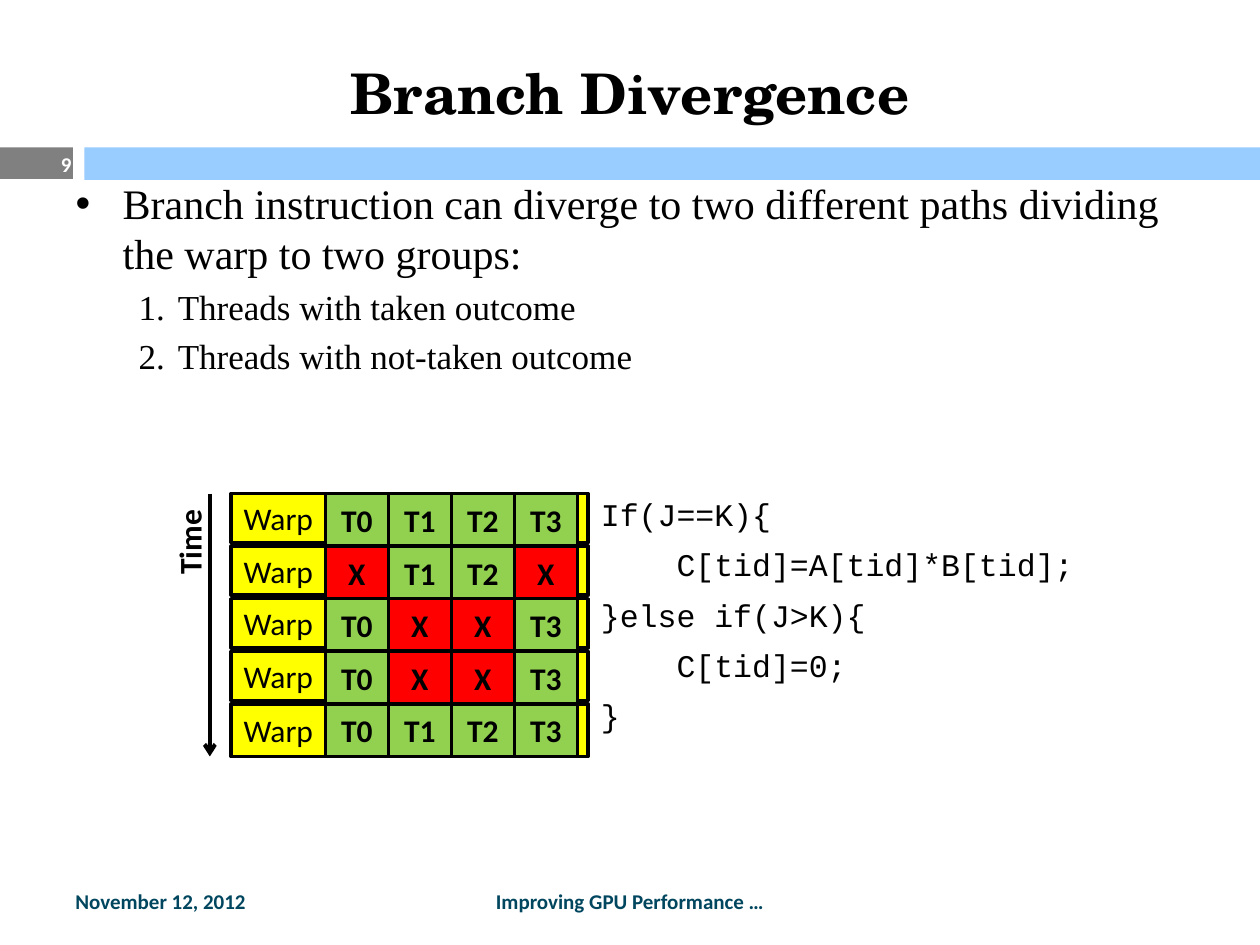
from dataclasses import dataclass

from lxml import etree
from pptx import Presentation
from pptx.dml.color import RGBColor
from pptx.enum.shapes import MSO_CONNECTOR, MSO_SHAPE
from pptx.enum.text import MSO_ANCHOR, MSO_AUTO_SIZE, PP_ALIGN
from pptx.oxml.ns import qn
from pptx.util import Cm, Pt

LEFT, CENTER, RIGHT = PP_ALIGN.LEFT, PP_ALIGN.CENTER, PP_ALIGN.RIGHT
TOP, MIDDLE = MSO_ANCHOR.TOP, MSO_ANCHOR.MIDDLE
RECTANGLE, STRAIGHT = MSO_SHAPE.RECTANGLE, MSO_CONNECTOR.STRAIGHT
NO_AUTOFIT = MSO_AUTO_SIZE.NONE


@dataclass(frozen=True)
class Theme:
    black: str = "000000"
    white: str = "FFFFFF"
    gray: str = "808080"
    band: str = "99CCFF"
    warp: str = "FFFF00"
    active: str = "92D050"
    masked: str = "FF0000"
    footer: str = "01465F"
    title_font: str = "TeX Gyre Schola"
    body_font: str = "Times New Roman"
    label_font: str = "Calibri"
    code_font: str = "Courier New"
    title_size: int = 32
    body_size: int = 24
    item_size: int = 20
    label_size: int = 18
    footer_size: int = 12


THEME = Theme()

TITLE = "Branch Divergence"
STATEMENT = ("Branch instruction can diverge to two different paths dividing "
             "the warp to two groups:")
OUTCOMES = ["Threads with taken outcome", "Threads with not-taken outcome"]
CODE = ["If(J==K){", "    C[tid]=A[tid]*B[tid];", "}else if(J>K){",
        "    C[tid]=0;", "}"]
THREADS = ["T0 T1 T2 T3", "X T1 T2 X", "T0 X X T3", "T0 X X T3", "T0 T1 T2 T3"]

GRID_TOP = 9.95
WARP_LEFT, WARP_WIDTH, WARP_HEIGHT = 4.66, 7.2, 0.99
THREAD_LEFT, THREAD_WIDTH, ROW_HEIGHT = 6.56, 1.27, 1.06
TIME_X = 4.23


def rgb(color):
    return RGBColor.from_string(color)


def text_format(font, size, color=THEME.black, bold=False):
    return {"name": font, "size": Pt(size), "bold": bold, "color": color}


LABEL = text_format(THEME.label_font, THEME.label_size)
BOLD_LABEL = {**LABEL, "bold": True}
FOOTER = text_format(THEME.label_font, THEME.footer_size, THEME.footer, True)


def write(paragraph, text, style, alignment=LEFT):
    paragraph.alignment = alignment
    run = paragraph.add_run()
    run.text = text
    for name, value in style.items():
        if name == "color":
            run.font.color.rgb = rgb(value)
        else:
            setattr(run.font, name, value)


def place(shape, left, top, width, height):
    box = {"left": left, "top": top, "width": width, "height": height}
    for name, value in box.items():
        setattr(shape, name, Cm(value))


def add_rectangle(slide, box, fill, text="", style=LABEL, alignment=LEFT, outlined=True):
    shape = slide.shapes.add_shape(RECTANGLE, *map(Cm, box))
    shape.shadow.inherit = False
    shape.fill.solid()
    shape.fill.fore_color.rgb = rgb(fill)
    if outlined:
        shape.line.color.rgb = rgb(THEME.black)
        shape.line.width = Pt(2)
    else:
        shape.line.fill.background()
    if text:
        shape.text_frame.vertical_anchor = MIDDLE
        write(shape.text_frame.paragraphs[0], text, style, alignment)


def add_label(slide, box, text, style, alignment=LEFT, anchor=MIDDLE, wrap=True):
    shape = slide.shapes.add_textbox(*map(Cm, box))
    shape.text_frame.word_wrap = wrap
    shape.text_frame.vertical_anchor = anchor
    write(shape.text_frame.paragraphs[0], text, style, alignment)
    return shape


def add_arrow(slide, start, end):
    arrow = slide.shapes.add_connector(STRAIGHT, *map(Cm, start + end))
    arrow.line.color.rgb = rgb(THEME.black)
    arrow.line.width = Pt(2.25)
    etree.SubElement(arrow.line._get_or_add_ln(), qn("a:tailEnd"), type="arrow")
    etree.SubElement(arrow._element.spPr, qn("a:effectLst"))


def set_bullet(paragraph, margin, hanging, tag, **attributes):
    properties = paragraph._p.get_or_add_pPr()
    properties.set("marL", str(Cm(margin)))
    properties.set("indent", str(-Cm(hanging)))
    etree.SubElement(properties, qn(tag), **attributes)


def fill_title(slide):
    title = slide.shapes.title
    place(title, 1.27, 0.76, 22.86, 2.21)
    title.text_frame.auto_size = NO_AUTOFIT
    title.text_frame.vertical_anchor = MIDDLE
    style = text_format(THEME.title_font, THEME.title_size, bold=True)
    write(title.text_frame.paragraphs[0], TITLE, style, CENTER)


def fill_body(slide):
    body = slide.placeholders[1]
    place(body, 1.27, 3.45, 22.86, 13.64)
    frame = body.text_frame
    frame.auto_size = NO_AUTOFIT
    frame.vertical_anchor = TOP
    statement = frame.paragraphs[0]
    statement.space_before = Pt(0)
    set_bullet(statement, 0.95, 0.95, "a:buChar", char="•")
    write(statement, STATEMENT, text_format(THEME.body_font, THEME.body_size))
    for outcome in OUTCOMES:
        item = frame.add_paragraph()
        item.level = 1
        item.space_before = Pt(4)
        set_bullet(item, 2.06, 0.79, "a:buAutoNum", type="arabicPeriod")
        write(item, outcome, text_format(THEME.body_font, THEME.item_size))


def add_code_table(slide):
    box = (11.86, GRID_TOP, 10.36, 0.64 * len(CODE))
    table = slide.shapes.add_table(len(CODE), 1, *map(Cm, box)).table
    table.first_row = table.horz_banding = False
    style = text_format(THEME.code_font, THEME.label_size)
    for row, line in enumerate(CODE):
        cell = table.cell(row, 0)
        cell.fill.background()
        write(cell.text_frame.paragraphs[0], line, style)


def add_warp_grid(slide):
    last = len(THREADS) - 1
    for row, threads in enumerate(THREADS):
        top = GRID_TOP + row * ROW_HEIGHT
        height = ROW_HEIGHT if row == last else WARP_HEIGHT
        add_rectangle(slide, (WARP_LEFT, top, WARP_WIDTH, height), THEME.warp, "Warp")
        for column, thread in enumerate(threads.split()):
            left = THREAD_LEFT + column * THREAD_WIDTH
            fill = THEME.masked if thread == "X" else THEME.active
            add_rectangle(slide, (left, top, THREAD_WIDTH, ROW_HEIGHT), fill,
                          thread, BOLD_LABEL, CENTER)


def add_time_axis(slide):
    label = add_label(slide, (2.9, 10.41, 1.83, 1.02), "Time", BOLD_LABEL,
                      anchor=TOP, wrap=False)
    label.rotation = 270
    bottom = GRID_TOP + len(THREADS) * ROW_HEIGHT
    add_arrow(slide, (TIME_X, GRID_TOP), (TIME_X, bottom))


def main():
    presentation = Presentation()
    presentation.slide_width, presentation.slide_height = Cm(25.4), Cm(19.05)
    slide = presentation.slides.add_slide(presentation.slide_layouts[1])
    add_rectangle(slide, (0, 2.97, 1.47, 0.64), THEME.gray, outlined=False)
    add_rectangle(slide, (1.7, 2.97, 23.7, 0.66), THEME.band, outlined=False)
    fill_title(slide)
    fill_body(slide)
    add_label(slide, (0, 2.79, 1.69, 1.02), "9", {**FOOTER, "color": THEME.white}, RIGHT)
    add_code_table(slide)
    add_warp_grid(slide)
    add_time_axis(slide)
    add_label(slide, (1.27, 17.65, 5.93, 1.02), "November 12, 2012", FOOTER)
    add_label(slide, (8.68, 17.65, 8.04, 1.02), "Improving GPU Performance …", FOOTER, CENTER)
    presentation.save("out.pptx")


if __name__ == "__main__":
    main()
